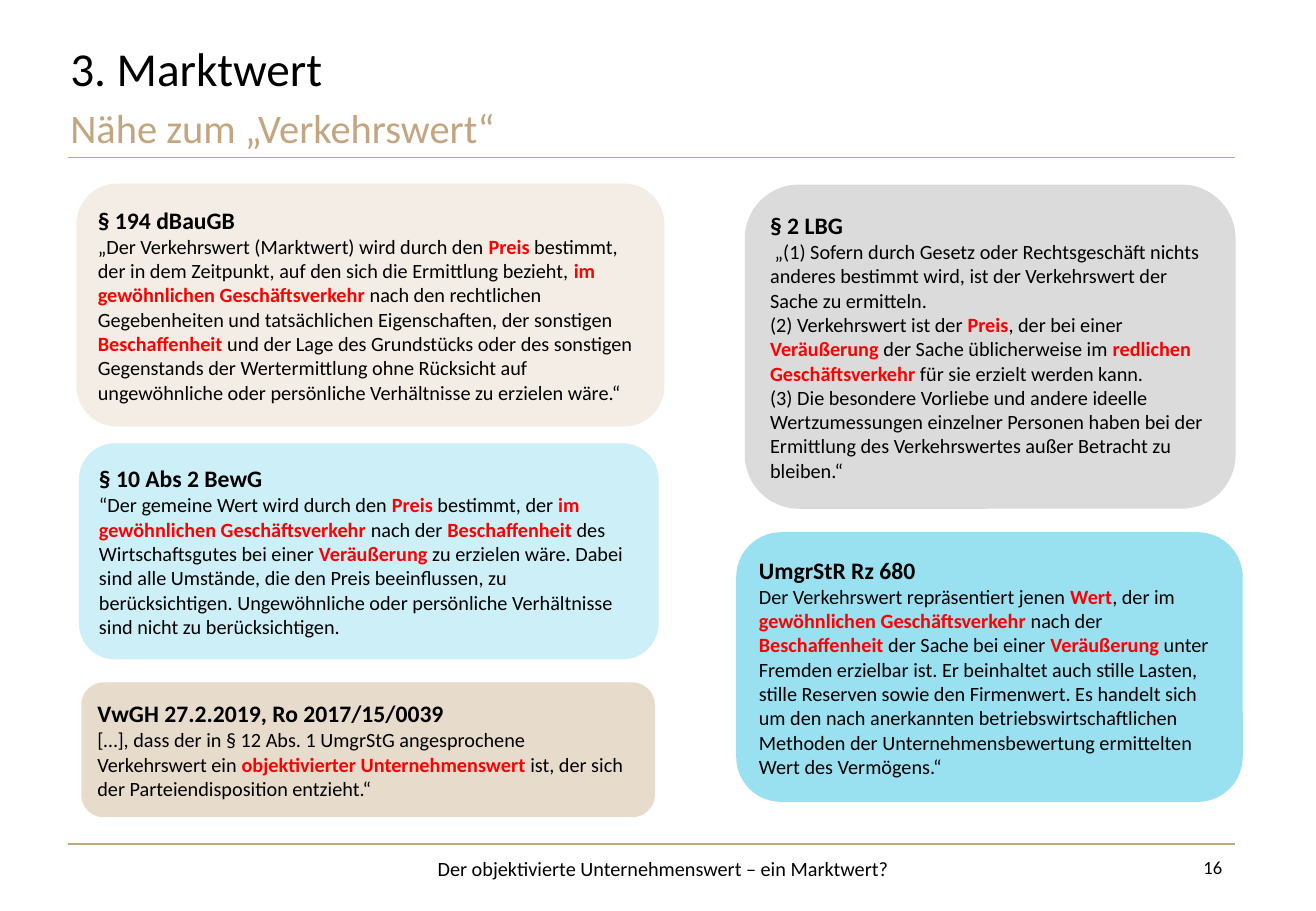
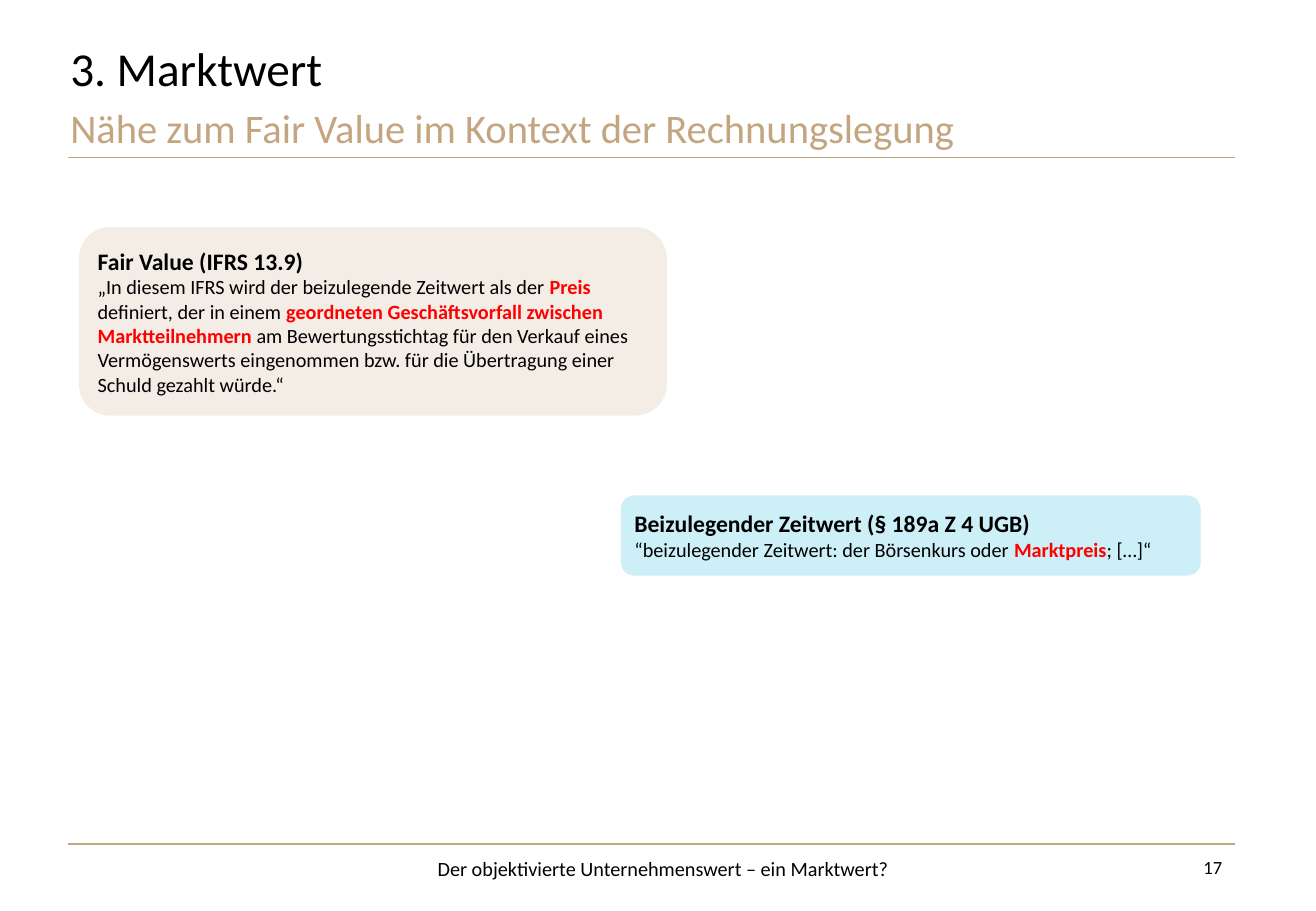
"""Build two slides that compare the market value with legal value definitions."""

from dataclasses import dataclass

import pptx
import pptx.dml.color
import pptx.enum.shapes
import pptx.enum.text
import pptx.oxml.ns
import pptx.presentation
import pptx.shapes.autoshape
import pptx.slide
import pptx.text.text
import pptx.util
from lxml import etree

Cm = pptx.util.Cm
Align = pptx.enum.text.PP_ALIGN
Anchor = pptx.enum.text.MSO_ANCHOR


@dataclass(frozen=True)
class Theme:
    font: str = "Calibri"
    text: str = "000000"
    accent: str = "C3A580"
    emphasis: str = "FF0000"
    sand_light: str = "F3EDE6"
    sand: str = "E7DBCC"
    cyan_light: str = "CCEFF8"
    cyan: str = "99E0F1"
    grey: str = "DBDBDB"
    title_size: int = 28
    subtitle_size: int = 24
    heading_size: int = 14
    body_size: int = 12
    number_size: int = 11
    rule_width: float = 0.75


@dataclass(frozen=True)
class Box:
    left: float
    top: float
    width: float
    height: float


@dataclass(frozen=True)
class Card:
    box: Box
    fill: str
    heading: str
    body: tuple[str, ...]


@dataclass(frozen=True)
class Page:
    number: int
    subtitle: str
    cards: tuple[Card, ...]


@dataclass(frozen=True)
class Label:
    box: Box
    size: int
    color: str
    align: Align = Align.LEFT
    anchor: Anchor = Anchor.TOP
    insets: tuple[float, float, float, float] = (0.25, 0.13, 0.25, 0.13)


THEME = Theme()
MARK = "*"
CARD_INSET = 0.2
RULE_LEFT, RULE_RIGHT = 1.42, 25.81
RULE_TOPS = (3.3, 17.65)
FOOTER_TOP = 17.78
TITLE = "3. Marktwert"
FOOTER = "Der objektivierte Unternehmenswert – ein Marktwert?"

TITLE_LABEL = Label(Box(1.47, 0.74, 21.62, 1.4), THEME.title_size, THEME.text,
                    anchor=Anchor.BOTTOM, insets=(0, 0, 0, 0.13))
SUBTITLE_LABEL = Label(Box(1.47, 2.11, 21.62, 1.19), THEME.subtitle_size, THEME.accent,
                       anchor=Anchor.BOTTOM, insets=(0, 0, 0.25, 0.13))
FOOTER_LABEL = Label(Box(5.56, FOOTER_TOP, 16.61, 1.02), THEME.body_size, THEME.text,
                     align=Align.CENTER)
NUMBER_LABEL = Label(Box(24.33, FOOTER_TOP, 1.47, 0.64), THEME.number_size, THEME.text,
                     align=Align.RIGHT)

PAGES = (
    Page(16, "Nähe zum „Verkehrswert“", (
        Card(Box(1.6, 3.84, 12.29, 5.08), THEME.sand_light, "§ 194 dBauGB", (
            "„Der Verkehrswert (Marktwert) wird durch den *Preis* bestimmt, der in dem "
            "Zeitpunkt, auf den sich die Ermittlung bezieht, *im gewöhnlichen "
            "Geschäftsverkehr *nach den rechtlichen Gegebenheiten und tatsächlichen "
            "Eigenschaften, der sonstigen *Beschaffenheit* und der Lage des Grundstücks "
            "oder des sonstigen Gegenstands der Wertermittlung ohne Rücksicht auf "
            "ungewöhnliche oder persönliche Verhältnisse zu erzielen wäre.“",
        )),
        Card(Box(15.39, 11.13, 10.59, 5.64), THEME.cyan, "UmgrStR Rz 680", (
            "Der Verkehrswert repräsentiert jenen *Wert*, der im *gewöhnlichen "
            "Geschäftsverkehr *nach der *Beschaffenheit* der Sache bei einer "
            "*Veräußerung* unter Fremden erzielbar ist. Er beinhaltet auch stille "
            "Lasten, stille Reserven sowie den Firmenwert. Es handelt sich um den nach "
            "anerkannten betriebswirtschaftlichen Methoden der Unternehmensbewertung "
            "ermittelten Wert des Vermögens.“",
        )),
        Card(Box(1.65, 9.27, 12.12, 4.52), THEME.cyan_light, "§ 10 Abs 2 BewG", (
            "“Der gemeine Wert wird durch den *Preis* bestimmt, der *im gewöhnlichen "
            "Geschäftsverkehr *nach der *Beschaffenheit* des Wirtschaftsgutes bei einer "
            "*Veräußerung* zu erzielen wäre. Dabei sind alle Umstände, die den Preis "
            "beeinflussen, zu berücksichtigen. Ungewöhnliche oder persönliche "
            "Verhältnisse sind nicht zu berücksichtigen.",
        )),
        Card(Box(15.57, 3.86, 10.26, 6.78), THEME.grey, "§ 2 LBG", (
            " „(1) Sofern durch Gesetz oder Rechtsgeschäft nichts anderes bestimmt wird, "
            "ist der Verkehrswert der Sache zu ermitteln.",
            "(2) Verkehrswert ist der *Preis*, der bei einer *Veräußerung* der Sache "
            "üblicherweise im *redlichen Geschäftsverkehr* für sie erzielt werden kann.",
            "(3) Die besondere Vorliebe und andere ideelle Wertzumessungen einzelner "
            "Personen haben bei der Ermittlung des Verkehrswertes außer Betracht zu "
            "bleiben.“",
        )),
        Card(Box(1.7, 14.27, 11.99, 2.82), THEME.sand, "VwGH 27.2.2019, Ro 2017/15/0039", (
            "[…], dass der in § 12 Abs. 1 UmgrStG angesprochene Verkehrswert ein "
            "*objektivierter Unternehmenswert *ist, der sich der Parteiendisposition "
            "entzieht.“",
        )),
    )),
    Page(17, "Nähe zum Fair Value im Kontext der Rechnungslegung", (
        Card(Box(1.65, 4.75, 12.29, 3.94), THEME.sand_light, "Fair Value (IFRS 13.9)", (
            "„In diesem IFRS wird der beizulegende Zeitwert als der *Preis* definiert, "
            "der in einem *geordneten Geschäftsvorfall zwischen Marktteilnehmern* am "
            "Bewertungsstichtag für den Verkauf eines Vermögenswerts eingenommen bzw. "
            "für die Übertragung einer Schuld gezahlt würde.“",
        )),
        Card(Box(12.98, 10.36, 12.12, 1.68), THEME.cyan_light,
             "Beizulegender Zeitwert (§ 189a Z 4 UGB)", (
            "“beizulegender Zeitwert: der Börsenkurs oder *Marktpreis*; […]“",
        )),
    )),
)


def rgb(color: str) -> pptx.dml.color.RGBColor:
    return pptx.dml.color.RGBColor.from_string(color)


def lengths(box: Box) -> tuple[Cm, Cm, Cm, Cm]:
    return Cm(box.left), Cm(box.top), Cm(box.width), Cm(box.height)


def prepare_frame(shape: pptx.shapes.autoshape.Shape, anchor: Anchor,
                  insets: tuple[float, float, float, float]) -> pptx.text.text.TextFrame:
    frame = shape.text_frame
    frame.word_wrap = True
    frame.vertical_anchor = anchor
    (frame.margin_left, frame.margin_top,
     frame.margin_right, frame.margin_bottom) = map(Cm, insets)
    return frame


def write_paragraph(paragraph: pptx.text.text._Paragraph, text: str, size: int,
                    color: str = THEME.text, align: Align = Align.LEFT,
                    bold: bool = False) -> None:
    paragraph.alignment = align
    paragraph.font.name = THEME.font
    paragraph.font.size = pptx.util.Pt(size)
    paragraph.font.bold = bold
    paragraph.font.color.rgb = rgb(color)
    for index, part in enumerate(text.split(MARK)):
        run = paragraph.add_run()
        run.text = part
        if index % 2:
            run.font.bold = True
            run.font.color.rgb = rgb(THEME.emphasis)


def add_label(slide: pptx.slide.Slide, label: Label, text: str) -> None:
    shape = slide.shapes.add_textbox(*lengths(label.box))
    frame = prepare_frame(shape, label.anchor, label.insets)
    write_paragraph(frame.paragraphs[0], text, label.size, label.color, label.align)


def add_rule(slide: pptx.slide.Slide, top: float) -> None:
    rule = slide.shapes.add_connector(
        pptx.enum.shapes.MSO_CONNECTOR.STRAIGHT,
        Cm(RULE_LEFT), Cm(top), Cm(RULE_RIGHT), Cm(top))
    rule.line.color.rgb = rgb(THEME.accent)
    rule.line.width = pptx.util.Pt(THEME.rule_width)
    etree.SubElement(rule._element.spPr, pptx.oxml.ns.qn("a:effectLst"))


def add_card(slide: pptx.slide.Slide, card: Card) -> None:
    shape = slide.shapes.add_shape(
        pptx.enum.shapes.MSO_SHAPE.ROUNDED_RECTANGLE, *lengths(card.box))
    shape.shadow.inherit = False
    shape.fill.solid()
    shape.fill.fore_color.rgb = rgb(card.fill)
    shape.line.fill.background()
    frame = prepare_frame(shape, Anchor.MIDDLE, (CARD_INSET,) * 4)
    frame.auto_size = pptx.enum.text.MSO_AUTO_SIZE.SHAPE_TO_FIT_TEXT
    write_paragraph(frame.paragraphs[0], card.heading, THEME.heading_size, bold=True)
    for text in card.body:
        write_paragraph(frame.add_paragraph(), text, THEME.body_size)


def add_page(presentation: pptx.presentation.Presentation, page: Page) -> None:
    slide = presentation.slides.add_slide(presentation.slide_layouts[6])
    for top in RULE_TOPS:
        add_rule(slide, top)
    add_label(slide, TITLE_LABEL, TITLE)
    add_label(slide, SUBTITLE_LABEL, page.subtitle)
    for card in page.cards:
        add_card(slide, card)
    add_label(slide, FOOTER_LABEL, FOOTER)
    add_label(slide, NUMBER_LABEL, str(page.number))


def main() -> None:
    presentation = pptx.Presentation()
    presentation.slide_width = Cm(27.51)
    presentation.slide_height = Cm(19.05)
    for page in PAGES:
        add_page(presentation, page)
    presentation.save("out.pptx")


if __name__ == "__main__":
    main()
